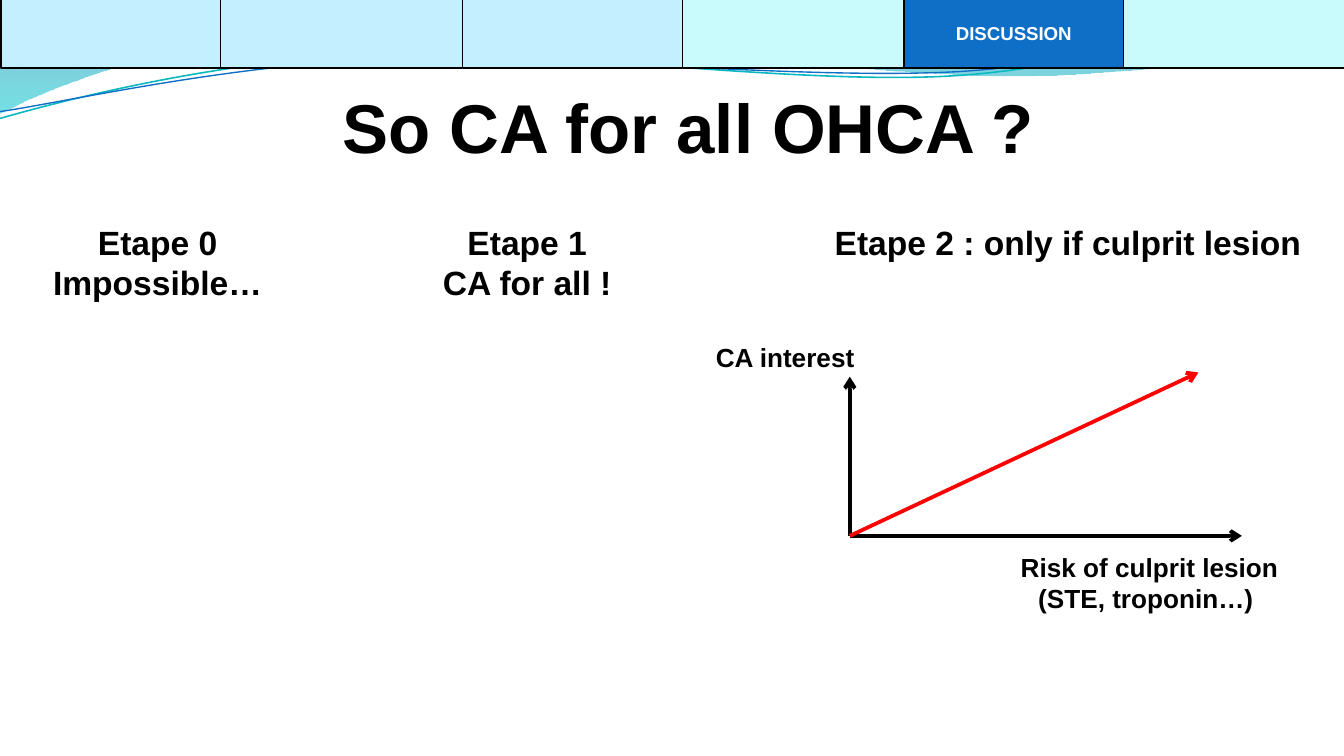
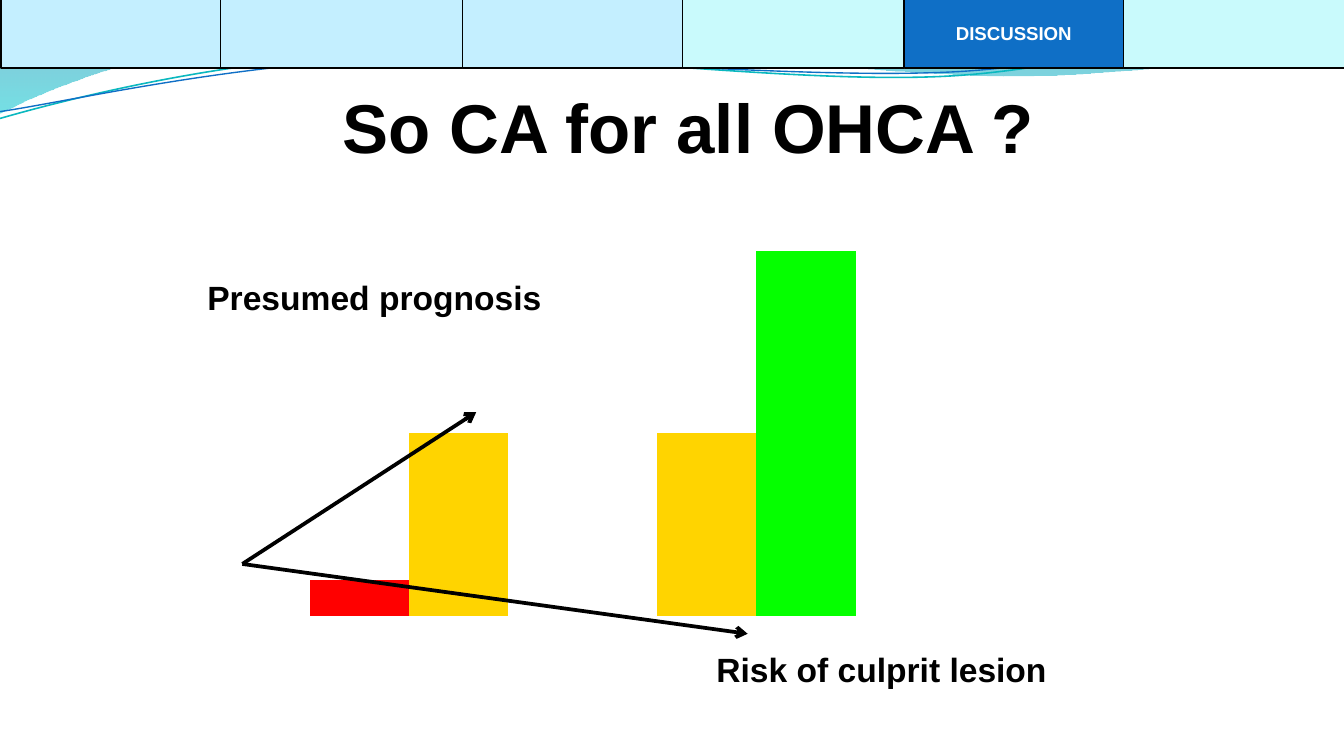
import lxml.etree
import pptx
import pptx.chart.data
import pptx.dml.color
import pptx.enum.chart
import pptx.enum.shapes
import pptx.enum.text
import pptx.oxml.ns
import pptx.util

Cm = pptx.util.Cm
Pt = pptx.util.Pt
qn = pptx.oxml.ns.qn
Align = pptx.enum.text.PP_ALIGN
Anchor = pptx.enum.text.MSO_ANCHOR

FONT = "Arial"
COLORS = {
    "black": "000000", "white": "FFFFFF", "red": "FF0000",
    "yellow": "FFD400", "green": "05FF00", "blue": "0F6FC6",
    "sky": "009DD9", "teal": "0AB8BF", "pale_blue": "C4EFFF",
    "pale_cyan": "C9FAFC", "wave_top": "0074A1", "wave_bottom": "00C6CF",
    "crest_top": "00A1A9", "crest_bottom": "008BBF",
}
TABS = [
    ("", "pale_blue"), ("", "pale_blue"), ("", "pale_blue"),
    ("", "pale_cyan"), ("DISCUSSION", "blue"), ("", "pale_cyan"),
]
TAB_EDGES = [0.02, 4.17, 8.74, 12.9, 17.09, 21.23, 25.42]
WAVE_BANDS = [
    ((0, 0), [
        [(11.18, -0.03)],
        [(12.09, 0.33), (16.87, 1.19), (19.25, 1.19)],
        [(21.67, 1.19), (24.33, 0.48), (25.4, 0.18)],
        [(25.43, 0.69)],
        [(24.97, 0.84), (22.1, 1.45), (18.95, 1.45)],
        [(15.8, 1.42), (9.7, 0.53), (6.53, 0.66)],
        [(3.28, 0.69), (1.17, 1.57), (-0.03, 2.16)],
    ], [(0, "wave_top", 45), (1, "wave_bottom", 55)]),
    ((12.17, -0.03), [
        [(12.93, 0.2), (17.32, 1.17), (19.53, 1.24)],
        [(21.74, 1.32), (24.41, 0.61), (25.4, 0.41)],
        [(25.4, 0)],
    ], [(0, "crest_top", 30), (0.8, "crest_bottom", 45)]),
]
WAVE_LINES = [
    ((0, 2.26), [
        [(1.22, 1.91), (4.01, 1.19), (7.04, 1.04)],
        [(10.06, 0.91), (15.04, 1.65), (18.08, 1.45)],
        [(21.16, 1.24), (23.85, 0.15), (25.35, -0.18)],
    ], "teal", 0.85),
    ((0, 2.13), [
        [(1.19, 1.96), (4.17, 1.27), (7.19, 1.14)],
        [(10.24, 1.02), (15.16, 1.55), (18.19, 1.37)],
        [(21.23, 1.17), (23.9, 0.25), (25.4, -0.03)],
    ], "blue", 0.75),
]


def rgb(name):
    return pptx.dml.color.RGBColor.from_string(COLORS[name])


def paint(fill, name):
    fill.solid()
    fill.fore_color.rgb = rgb(name)


def write(frame, lines, size, color="black", align=Align.CENTER, spacing=None):
    frame.text = "\n".join(lines)
    for paragraph in frame.paragraphs:
        paragraph.alignment = align
        paragraph.line_spacing = spacing
        paragraph.font.name = FONT
        paragraph.font.size = Pt(size)
        paragraph.font.bold = True
        paragraph.font.color.rgb = rgb(color)


def add_label(slide, left, top, width, height, lines, size, align=Align.CENTER):
    label = slide.shapes.add_textbox(Cm(left), Cm(top), Cm(width), Cm(height))
    frame = label.text_frame
    frame.word_wrap = True
    frame.auto_size = pptx.enum.text.MSO_AUTO_SIZE.SHAPE_TO_FIT_TEXT
    write(frame, lines, size, align=align)


def add_arrow(slide, start, end, color="black"):
    arrow = slide.shapes.add_connector(
        pptx.enum.shapes.MSO_CONNECTOR.STRAIGHT,
        *(Cm(value) for value in (*start, *end)))
    arrow.line.width = Pt(2)
    arrow.line.color.rgb = rgb(color)
    properties = arrow._element.spPr
    line = properties.find(qn("a:ln"))
    lxml.etree.SubElement(line, qn("a:tailEnd"), type="arrow")
    lxml.etree.SubElement(properties, qn("a:effectLst"))


def add_curve(slide, left, top, start, segments, close):
    points = [(Cm(left + x), Cm(top + y))
              for x, y in [start, *(point for segment in segments for point in segment)]]
    builder = slide.shapes.build_freeform(*points[0])
    builder.add_line_segments(points[1:], close=close)
    shape = builder.convert_to_shape()
    shape.shadow.inherit = False
    steps = iter(list(shape._element.iter(qn("a:lnTo"))))
    for segment in segments:
        group = [next(steps) for _ in segment]
        if len(group) == 3:
            curve = lxml.etree.Element(qn("a:cubicBezTo"))
            group[0].addprevious(curve)
            for step in group:
                curve.append(step[0])
                step.getparent().remove(step)
    return shape


def add_waves(slide, left, top):
    for start, segments, stops in WAVE_BANDS:
        band = add_curve(slide, left, top, start, segments, True)
        band.fill.gradient()
        band.fill.gradient_angle = 270
        for stop, (position, color, _) in zip(band.fill.gradient_stops, stops):
            stop.position = position
            stop.color.rgb = rgb(color)
        tints = band._element.spPr.iter(qn("a:srgbClr"))
        for tint, (_, _, opacity) in zip(tints, stops):
            lxml.etree.SubElement(tint, qn("a:alpha"), val=str(opacity * 1000))
        band.line.fill.background()
    for start, segments, color, width in WAVE_LINES:
        wave = add_curve(slide, left, top, start, segments, False)
        wave.fill.background()
        wave.line.color.rgb = rgb(color)
        wave.line.width = Pt(width)


def add_navigation(slide, left, top, height):
    for (name, color), start, end in zip(TABS, TAB_EDGES, TAB_EDGES[1:]):
        tab = slide.shapes.add_shape(
            pptx.enum.shapes.MSO_SHAPE.RECTANGLE,
            Cm(left + start), Cm(top), Cm(end - start), Cm(height))
        tab.shadow.inherit = False
        paint(tab.fill, color)
        tab.line.color.rgb = rgb("black")
        tab.line.width = Pt(0.75)
        if name:
            frame = tab.text_frame
            frame.word_wrap = False
            frame.vertical_anchor = Anchor.MIDDLE
            frame.margin_left = frame.margin_right = 0
            frame.margin_top = frame.margin_bottom = 0
            write(frame, [name], 10, "white")


def add_title(slide, left, top, width, height, text):
    title = slide.shapes.add_textbox(Cm(left), Cm(top), Cm(width), Cm(height))
    frame = title.text_frame
    frame.word_wrap = True
    frame.vertical_anchor = Anchor.MIDDLE
    write(frame, [text], 37, spacing=0.7)


def add_discussion_slide(presentation):
    slide = presentation.slides.add_slide(presentation.slide_layouts[6])
    paint(slide.background.fill, "white")
    add_waves(slide, 0, -0.02)
    add_navigation(slide, 0, -0.03, 1.32)
    add_title(slide, 1.58, 1.87, 22.86, 1.42, "So CA for all OHCA ?")
    return slide


def add_steps(slide, left, top):
    add_label(slide, left, top, 5.38, 1.8, ["Etape 0", "Impossible…"], 18)
    add_label(slide, left + 6.07, top, 7.21, 1.8, ["Etape 1", "CA for all !"], 18)
    add_label(slide, left + 14.94, top, 9.91, 1.02,
              ["Etape 2 : only if culprit lesion"], 18)


def add_interest_graph(slide, left, top, width, height):
    origin = (left, top + height)
    add_label(slide, left - 3.47, top - 0.8, 4.5, 0.86, ["CA interest"], 14)
    add_label(slide, left + 2.25, top + height + 0.16, 6.83, 1.45,
              ["Risk of culprit lesion", "(STE, troponin…) "], 14)
    add_arrow(slide, origin, (left + width, top + height))
    add_arrow(slide, origin, (left, top))
    add_arrow(slide, origin, (left + 6.59, top - 0.08), "red")


def add_prognosis_chart(slide, left, top, width, height):
    data = pptx.chart.data.CategoryChartData()
    data.categories = ["1", "2"]
    data.add_series("Series 1", [10, 50])
    data.add_series("Series 2", [50, 100])
    chart = slide.shapes.add_chart(
        pptx.enum.chart.XL_CHART_TYPE.COLUMN_CLUSTERED,
        Cm(left), Cm(top), Cm(width), Cm(height), data).chart
    chart.has_title = False
    chart.has_legend = False
    chart.font.name = FONT
    chart.font.size = Pt(18)
    chart.font.color.rgb = rgb("black")
    for axis in (chart.category_axis, chart.value_axis):
        axis.visible = False
        axis.has_major_gridlines = False
    chart.value_axis.minimum_scale = 0
    chart.value_axis.maximum_scale = 120
    plot = chart.plots[0]
    plot.vary_by_categories = False
    plot.gap_width = 150
    plot.overlap = 0
    column_colors = [("blue", "red", "yellow"), ("sky", "yellow", "green")]
    for series, (base, *points) in zip(plot.series, column_colors):
        paint(series.format.fill, base)
        for index, color in enumerate(points):
            paint(series.points[index].format.fill, color)


def add_prognosis_axes(slide, left, top):
    origin = (left, top)
    add_arrow(slide, origin, (left + 9.55, top + 1.32))
    add_arrow(slide, origin, (left + 4.42, top - 2.87))
    add_label(slide, left + 8.71, top + 1.48, 6.78, 1.02,
              ["Risk of culprit lesion"], 18, Align.LEFT)
    add_label(slide, left - 0.91, top - 5.55, 7.34, 1.02,
              ["Presumed prognosis"], 18, Align.LEFT)


def main():
    presentation = pptx.Presentation()
    presentation.slide_width = Cm(25.4)
    presentation.slide_height = Cm(14.29)

    steps_slide = add_discussion_slide(presentation)
    add_steps(steps_slide, 0.29, 4.07)
    add_interest_graph(steps_slide, 16.06, 7.12, 7.41, 3.01)

    prognosis_slide = add_discussion_slide(presentation)
    add_prognosis_chart(prognosis_slide, 4.18, 3.19, 13.67, 8.63)
    add_prognosis_axes(prognosis_slide, 4.58, 10.66)

    presentation.save("out.pptx")


if __name__ == "__main__":
    main()
